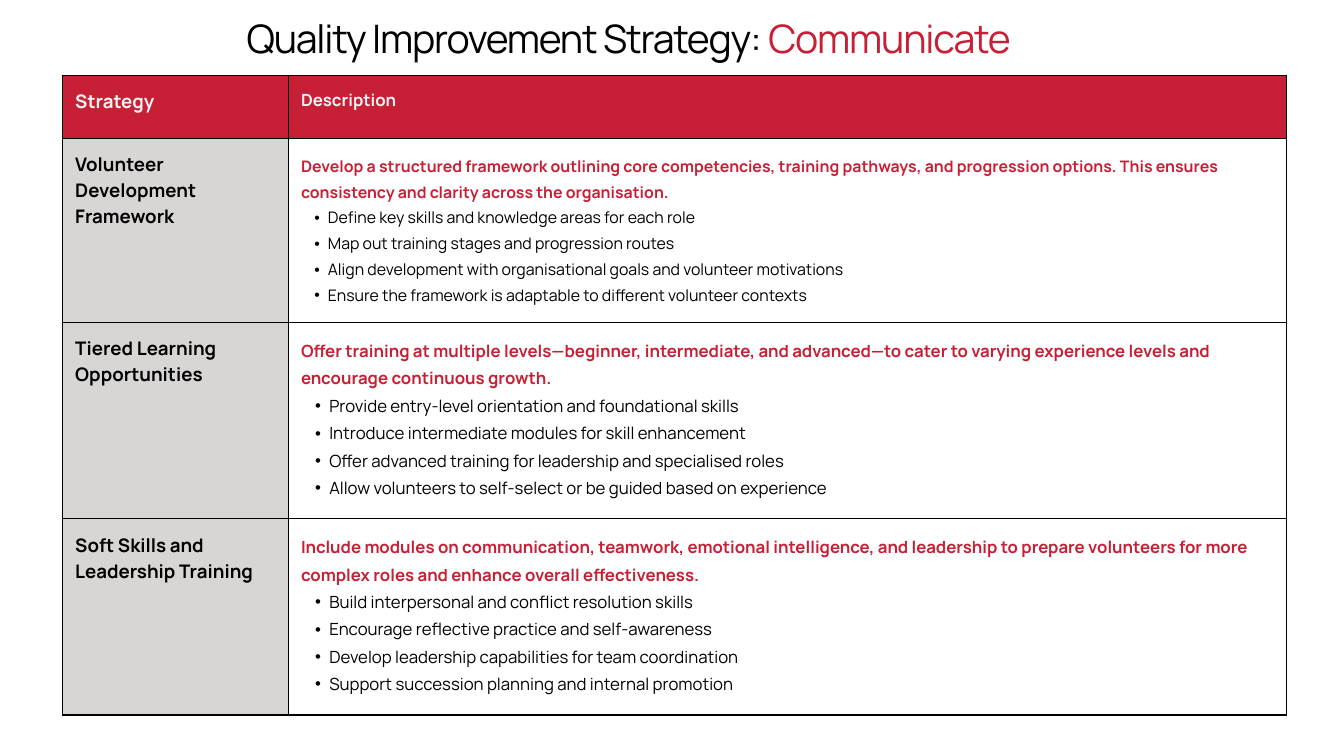
from dataclasses import dataclass

from lxml.etree import SubElement
from pptx import Presentation
from pptx.dml.color import RGBColor
from pptx.enum.text import MSO_ANCHOR, MSO_AUTO_SIZE, PP_ALIGN
from pptx.oxml.ns import qn
from pptx.table import _Cell as Cell
from pptx.util import Inches, Pt

COLORS = {"red": "C72036", "grey": "D8D5D5", "light": "F6F4F5", "black": "000000"}
FONT = "Manrope"
COLUMN_WIDTHS = (3.36, 14.85)
ROW_HEIGHTS = (0.94, 2.74, 2.92, 2.92)
CELL_MARGIN = 0.19


@dataclass(frozen=True)
class Style:
    size: float
    line: float
    color: str = "black"
    bold: bool = True
    indent: float = 0


@dataclass(frozen=True)
class Strategy:
    name: str
    summary: str
    actions: tuple[str, ...]
    size: float = 18
    line: float = 29.3
    indent: float = 0.21


STRATEGIES = (
    Strategy(
        "Volunteer Development Framework",
        "Develop a structured framework outlining core competencies, training pathways, "
        "and progression options. This ensures consistency and clarity across the organisation.",
        (
            "Define key skills and knowledge areas for each role",
            "Map out training stages and progression routes",
            "Align development with organisational goals and volunteer motivations",
            "Ensure the framework is adaptable to different volunteer contexts",
        ),
        size=17,
        line=27.7,
        indent=0.2,
    ),
    Strategy(
        "Tiered Learning Opportunities",
        "Offer training at multiple levels—beginner, intermediate, and advanced—to cater "
        "to varying experience levels and encourage continuous growth.",
        (
            "Provide entry-level orientation and foundational skills",
            "Introduce intermediate modules for skill enhancement",
            "Offer advanced training for leadership and specialised roles",
            "Allow volunteers to self-select or be guided based on experience",
        ),
    ),
    Strategy(
        "Soft Skills and Leadership Training",
        "Include modules on communication, teamwork, emotional intelligence, and leadership "
        "to prepare volunteers for more complex roles and enhance overall effectiveness.",
        (
            "Build interpersonal and conflict resolution skills",
            "Encourage reflective practice and self-awareness",
            "Develop leadership capabilities for team coordination",
            "Support succession planning and internal promotion",
        ),
    ),
)


def add_span(para, text: str, style: Style):
    span = para.add_run()
    span.text = text
    values = {"name": FONT, "size": Pt(style.size), "bold": style.bold}
    for key, value in values.items():
        setattr(span.font, key, value)
    span.font.color.rgb = RGBColor.from_string(COLORS[style.color])
    return span


def add_bullet(para, indent: float) -> None:
    para.level = 1
    props = para._p.get_or_add_pPr()
    props.set("marL", str(Inches(2 * indent)))
    props.set("indent", str(-Inches(indent)))
    SubElement(props, qn("a:buFont"), typeface="Arial")
    SubElement(props, qn("a:buChar"), char="•")


def add_borders(cell: Cell) -> None:
    props = cell._tc.get_or_add_tcPr()
    for side in ("lnL", "lnR", "lnT", "lnB"):
        line = SubElement(props, qn(f"a:{side}"), w=str(Pt(1.5)))
        fill = SubElement(line, qn("a:solidFill"))
        SubElement(fill, qn("a:srgbClr"), val=COLORS["black"])


def fill_cell(cell: Cell, lines: list[tuple[str, Style]], fill: str | None = None) -> None:
    for side in ("left", "right", "top", "bottom"):
        setattr(cell, f"margin_{side}", Inches(CELL_MARGIN))
    cell.vertical_anchor = MSO_ANCHOR.TOP
    add_borders(cell)
    if fill:
        cell.fill.solid()
        cell.fill.fore_color.rgb = RGBColor.from_string(COLORS[fill])
    else:
        cell.fill.background()
    frame = cell.text_frame
    for index, (text, style) in enumerate(lines):
        para = frame.add_paragraph() if index else frame.paragraphs[0]
        para.line_spacing = Pt(style.line)
        if style.indent:
            add_bullet(para, style.indent)
        add_span(para, text, style)


def add_title(page) -> None:
    box = page.shapes.title
    place = {"left": 3.67, "top": 0.04, "width": 14.12, "height": 0.88}
    for key, value in place.items():
        setattr(box, key, Inches(value))
    frame = box.text_frame
    layout = {
        "margin_left": 0, "margin_right": 0, "margin_top": 0, "margin_bottom": 0,
        "word_wrap": True, "auto_size": MSO_AUTO_SIZE.NONE,
        "vertical_anchor": MSO_ANCHOR.TOP,
    }
    for key, value in layout.items():
        setattr(frame, key, value)
    para = frame.paragraphs[0]
    para.alignment = PP_ALIGN.LEFT
    para.line_spacing = Pt(63)
    for text, color in (("Quality Improvement Strategy: ", "black"), ("Communicate", "red")):
        span = add_span(para, text, Style(42, 63, color, bold=False))
        span._r.get_or_add_rPr().set("spc", "-130")


def add_strategy_table(page) -> None:
    frame = page.shapes.add_table(
        len(ROW_HEIGHTS), len(COLUMN_WIDTHS), Inches(0.93), Inches(1.12),
        Inches(sum(COLUMN_WIDTHS)), Inches(sum(ROW_HEIGHTS)),
    )
    table = frame.table
    table.horz_banding = False
    for column, width in zip(table.columns, COLUMN_WIDTHS):
        column.width = Inches(width)
    for row, height in zip(table.rows, ROW_HEIGHTS):
        row.height = Inches(height)

    fill_cell(table.cell(0, 0), [("Strategy", Style(20, 28, "light"))], "red")
    fill_cell(table.cell(0, 1), [("Description", Style(18, 25.2, "light"))], "red")
    for row, item in enumerate(STRATEGIES, start=1):
        summary = Style(item.size, item.line, "red")
        action = Style(item.size, item.line, bold=False, indent=item.indent)
        fill_cell(table.cell(row, 0), [(item.name, Style(20, 28))], "grey")
        fill_cell(
            table.cell(row, 1),
            [(item.summary, summary), *((text, action) for text in item.actions)],
        )


def main() -> None:
    deck = Presentation()
    deck.slide_width = Inches(20)
    deck.slide_height = Inches(11.25)
    page = deck.slides.add_slide(deck.slide_layouts[5])
    add_title(page)
    add_strategy_table(page)
    deck.save("out.pptx")


if __name__ == "__main__":
    main()
